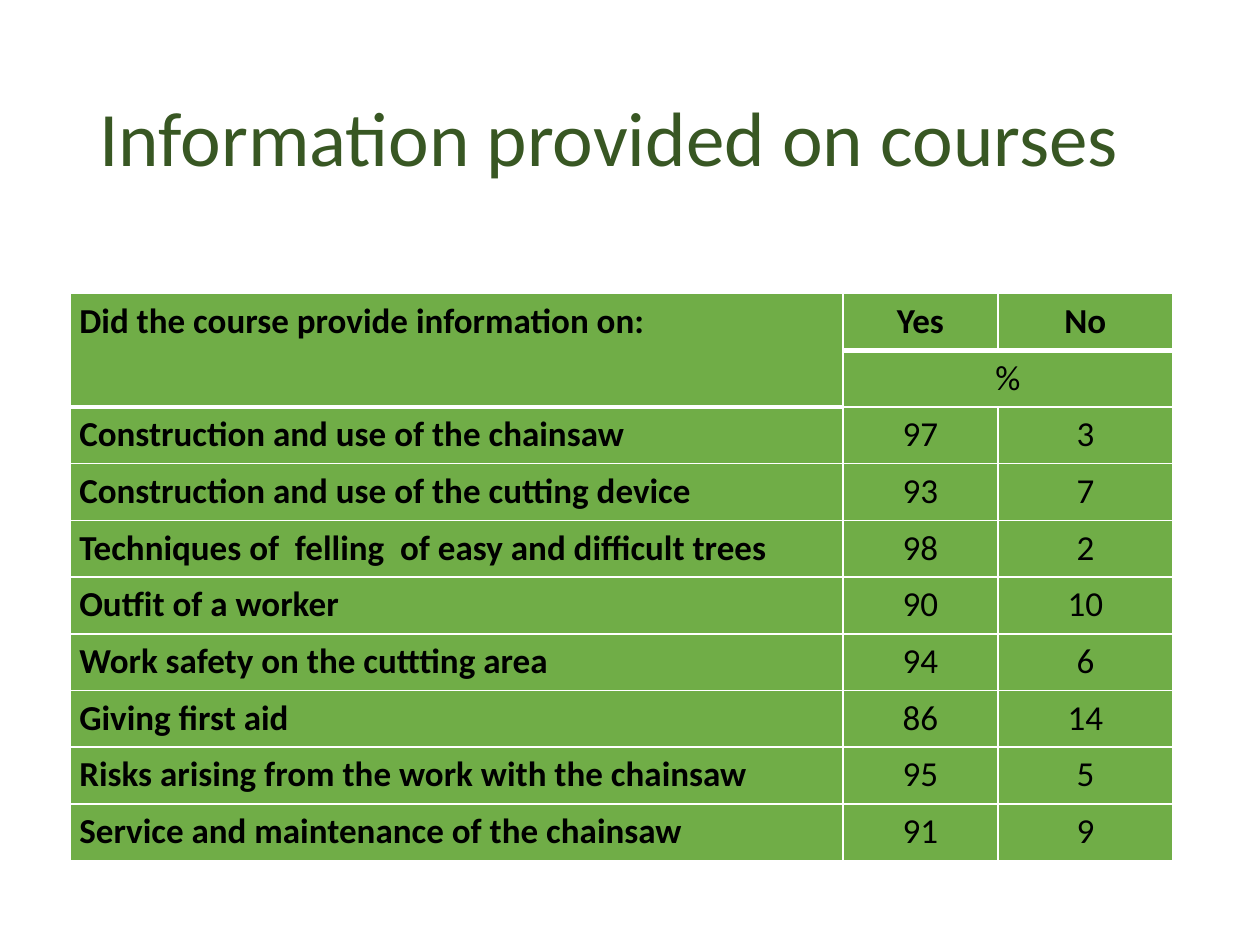
from lxml import etree
from pptx import Presentation
from pptx.dml.color import RGBColor
from pptx.enum.text import MSO_ANCHOR, PP_ALIGN
from pptx.oxml.ns import qn
from pptx.util import Inches, Pt

CENTER = PP_ALIGN.CENTER
JUSTIFY = PP_ALIGN.JUSTIFY
LEFT = PP_ALIGN.LEFT
TOP = MSO_ANCHOR.TOP
MIDDLE = MSO_ANCHOR.MIDDLE

FONT = "Calibri"
WHITE = "FFFFFF"
BLACK = "000000"
GREEN = "70AD47"
DARK_GREEN = "385723"

COLUMN_WIDTHS = [6.13, 1.23, 1.39]
ROWS = [
    ("Did the course provide information on:", "Yes", "No"),
    ("", "%", ""),
    ("Construction and use of the chainsaw", "97", "3"),
    ("Construction and use of the cutting device", "93", "7"),
    ("Techniques of  felling  of easy and difficult trees", "98", "2"),
    ("Outfit of a worker", "90", "10"),
    ("Work safety on the cuttting area", "94", "6"),
    ("Giving first aid", "86", "14"),
    ("Risks arising from the work with the chainsaw", "95", "5"),
    ("Service and maintenance of the chainsaw", "91", "9"),
]
THICK_BOTTOMS = {(0, 0), (0, 1), (0, 2), (1, 0)}


def color(value):
    return RGBColor.from_string(value)


def apply_format(target, values):
    for name, value in values.items():
        setattr(target, name, value)


def write_text(paragraph, text, size, text_color, alignment, line_spacing, bold=False):
    apply_format(paragraph, {"alignment": alignment, "line_spacing": line_spacing})
    run = paragraph.add_run()
    run.text = text
    apply_format(run.font, {"name": FONT, "size": Pt(size), "bold": bold})
    run.font.color.rgb = color(text_color)


def add_title(slide, left, top, width, height):
    frame = slide.shapes.add_textbox(left, top, width, height).text_frame
    apply_format(frame, {"word_wrap": True, "vertical_anchor": MIDDLE})
    write_text(frame.paragraphs[0], "Information provided on courses",
               44, DARK_GREEN, LEFT, 0.9)


def add_borders(cell, widths):
    properties = cell._tc.get_or_add_tcPr()
    for side in ("L", "R", "T", "B"):
        line = etree.SubElement(properties, qn(f"a:ln{side}"), w=str(Pt(widths.get(side, 1))))
        fill = etree.SubElement(line, qn("a:solidFill"))
        etree.SubElement(fill, qn("a:srgbClr"), val=WHITE)


def format_cell(cell, row, column):
    apply_format(cell, {
        "margin_left": Inches(0.07),
        "margin_right": Inches(0.07),
        "margin_top": 0,
        "margin_bottom": 0,
        "vertical_anchor": TOP,
    })
    add_borders(cell, {
        "T": 3 if (row - 1, column) in THICK_BOTTOMS else 1,
        "B": 3 if (row, column) in THICK_BOTTOMS else 1,
    })
    cell.fill.solid()
    cell.fill.fore_color.rgb = color(GREEN)


def add_course_table(slide, left, top, width, height):
    table = slide.shapes.add_table(
        len(ROWS), len(COLUMN_WIDTHS), left, top, width, height).table
    apply_format(table, {"first_row": False, "horz_banding": False})
    for column, column_width in zip(table.columns, COLUMN_WIDTHS):
        column.width = Inches(column_width)
    table.cell(0, 0).merge(table.cell(1, 0))
    table.cell(1, 1).merge(table.cell(1, 2))
    for row, texts in enumerate(ROWS):
        for column, text in enumerate(texts):
            cell = table.cell(row, column)
            format_cell(cell, row, column)
            if text:
                write_text(cell.text_frame.paragraphs[0], text, 20, BLACK,
                           CENTER if column else JUSTIFY, 1.15,
                           bold=row == 0 or column == 0)


def main():
    presentation = Presentation()
    apply_format(presentation, {"slide_width": Inches(10), "slide_height": Inches(7.5)})
    slide = presentation.slides.add_slide(presentation.slide_layouts[6])
    add_title(slide, Inches(0.69), Inches(0.4), Inches(8.62), Inches(1.45))
    add_course_table(slide, Inches(0.56), Inches(2.33), Inches(8.75), Inches(4.5))
    presentation.save("out.pptx")


if __name__ == "__main__":
    main()
